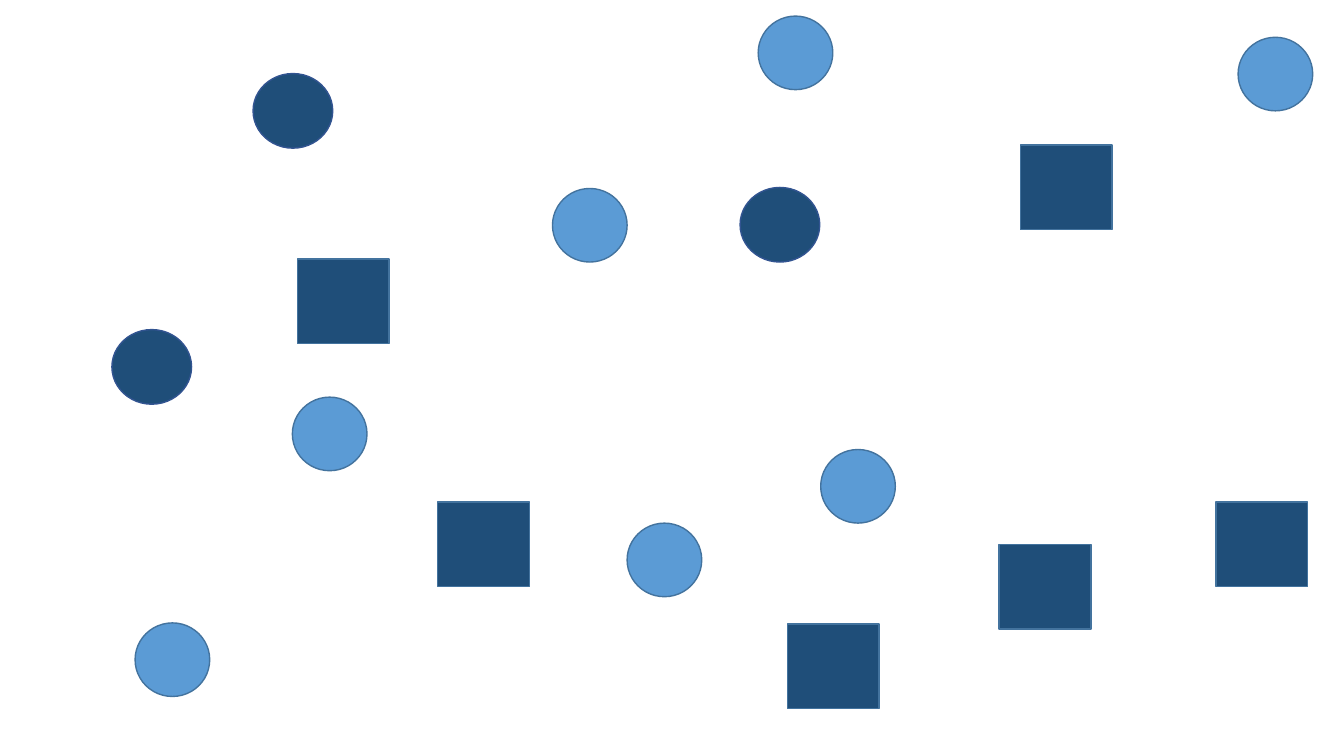
import pptx
import pptx.dml.color
import pptx.enum.shapes
import pptx.util

Inches = pptx.util.Inches
SHAPES = pptx.enum.shapes.MSO_SHAPE

COLOURS = {
    "light blue": "5B9BD5",
    "dark blue": "1F4E79",
    "steel edge": "43739E",
    "navy edge": "325491",
}

# Left and top of each marker, in inches from the corner of the field
LIGHT_CIRCLES = [(1.34, 6.18), (5.48, 1.87), (2.9, 3.94), (8.14, 4.46),
                 (6.22, 5.19), (12.28, 0.37), (7.52, 0.16)]
DARK_CIRCLES = [(1.11, 3.27), (7.34, 1.86), (2.51, 0.73)]
SQUARES = [(12.06, 4.98), (2.95, 2.57), (4.34, 4.98),
           (9.91, 5.4), (7.81, 6.19), (10.12, 1.44)]


def rgb(name):
    return pptx.dml.color.RGBColor.from_string(COLOURS[name])


def add_markers(page, field, places, preset, size, fill, edge):
    """Scatter equal markers over a field whose corner is given in inches."""
    left, top = field
    width, height = size
    for x, y in places:
        marker = page.shapes.add_shape(
            preset, Inches(left + x), Inches(top + y),
            Inches(width), Inches(height))
        marker.shadow.inherit = False
        marker.fill.solid()
        marker.fill.fore_color.rgb = rgb(fill)
        marker.line.color.rgb = rgb(edge)
        marker.line.width = pptx.util.Pt(1)


def add_scatter(page, field):
    # Light circles
    add_markers(page, field, LIGHT_CIRCLES, SHAPES.OVAL, (0.74, 0.73),
                "light blue", "steel edge")
    # Dark circles
    add_markers(page, field, DARK_CIRCLES, SHAPES.OVAL, (0.79, 0.74),
                "dark blue", "navy edge")
    # Squares
    add_markers(page, field, SQUARES, SHAPES.RECTANGLE, (0.91, 0.84),
                "dark blue", "steel edge")


def main():
    deck = pptx.Presentation()
    deck.slide_width = Inches(13.33)
    deck.slide_height = Inches(7.5)
    page = deck.slides.add_slide(deck.slide_layouts[6])
    add_scatter(page, (0, 0))
    deck.save("out.pptx")


if __name__ == "__main__":
    main()
